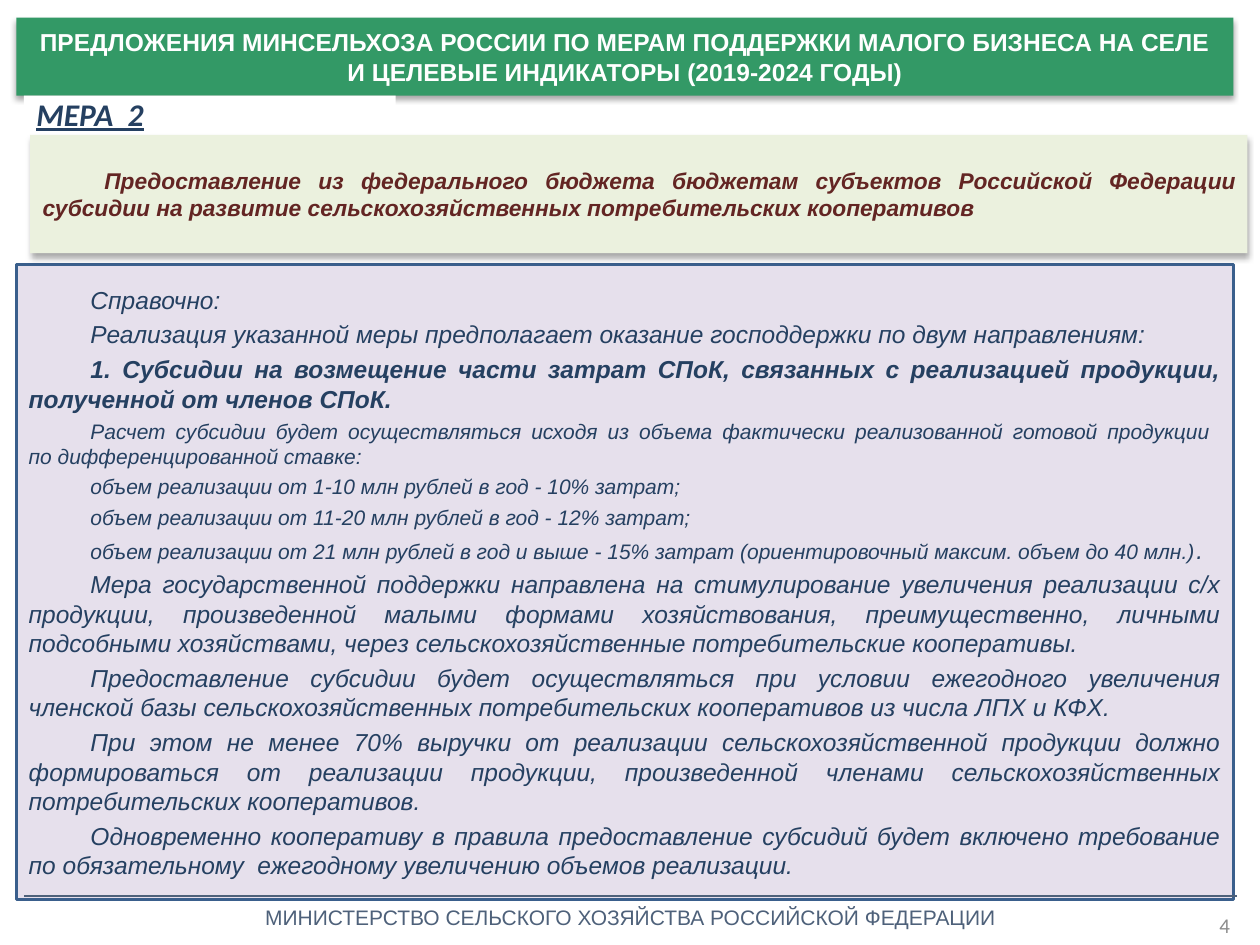
from lxml.etree import SubElement
from pptx import Presentation
from pptx.dml.color import RGBColor
from pptx.enum.shapes import MSO_CONNECTOR as Connector, MSO_SHAPE as Shape
from pptx.enum.text import MSO_ANCHOR as Anchor, PP_ALIGN as Align
from pptx.oxml.ns import qn
from pptx.util import Inches, Pt

NAVY = "254061"
SLATE = "4E617A"
LEFT, WIDTH = 0.13, 9.66
INDENT = 0.49

NOTES = [
    ([("Справочно: ", 14)], False),
    ([("Реализация указанной меры предполагает оказание господдержки по двум направлениям:", 14)], False),
    ([("1. Субсидии на возмещение части затрат СПоК, связанных с реализацией продукции, "
       "полученной от членов СПоК. ", 14)], True),
    ([("Расчет субсидии будет осуществляться исходя из объема фактически реализованной "
       "готовой продукции \nпо дифференцированной ставке:", 12)], False),
    ([("объем реализации от 1-10 млн рублей в год - 10% затрат; ", 12)], False),
    ([("объем реализации от 11-20 млн рублей в год - 12% затрат;", 12)], False),
    ([("объем реализации от 21 млн рублей в год и выше - 15% затрат "
       "(ориентировочный максим. объем до 40 млн.)", 12), (".", 14)], False),
    ([("Мера государственной поддержки направлена на стимулирование увеличения реализации с/х "
       "продукции, произведенной малыми формами хозяйствования, преимущественно, личными "
       "подсобными хозяйствами, через сельскохозяйственные потребительские кооперативы.", 14)], False),
    ([("Предоставление субсидии будет осуществляться при условии ежегодного увеличения членской "
       "базы сельскохозяйственных потребительских кооперативов из числа ЛПХ и КФХ. ", 14)], False),
    ([("При этом не менее 70% выручки от реализации сельскохозяйственной продукции должно "
       "формироваться от реализации продукции, произведенной членами сельскохозяйственных "
       "потребительских кооперативов. ", 14)], False),
    ([("Одновременно кооперативу в правила предоставление субсидий будет включено требование "
       "по обязательному  ежегодному увеличению объемов реализации.", 14)], False),
]


def color(value):
    """Turn a hex string into a colour."""
    return RGBColor.from_string(value)


def add_panel(page, left, top, width, height, fill):
    """Add a plain filled rectangle with vertically centred text."""
    box = page.shapes.add_shape(
        Shape.RECTANGLE, Inches(left), Inches(top), Inches(width), Inches(height))
    box.shadow.inherit = False
    box.fill.solid()
    box.fill.fore_color.rgb = color(fill)
    box.line.fill.background()
    box.text_frame.word_wrap = True
    box.text_frame.vertical_anchor = Anchor.MIDDLE
    return box


def add_label(page, left, top, width, height, anchor=Anchor.TOP):
    """Add a wrapping text box."""
    box = page.shapes.add_textbox(Inches(left), Inches(top), Inches(width), Inches(height))
    box.text_frame.word_wrap = True
    box.text_frame.vertical_anchor = anchor
    return box


def drop_shadow(box, alpha, blur, distance):
    """Cast a soft black shadow straight down."""
    effects = box._element.spPr.find(qn("a:effectLst"))
    shadow = SubElement(effects, qn("a:outerShdw"), blurRad=str(Pt(blur)),
                        dist=str(Pt(distance)), dir="5400000", rotWithShape="0")
    black = SubElement(shadow, qn("a:srgbClr"), val="000000")
    SubElement(black, qn("a:alpha"), val=str(alpha * 1000))


def write(para, text, size, ink, font="Arial", align=Align.LEFT, indent=0,
          bold=False, italic=False, underline=False):
    """Append formatted text to a paragraph, breaking lines at newlines."""
    para.alignment = align
    if indent:
        para._p.get_or_add_pPr().set("indent", str(Inches(indent)))
    for number, line in enumerate(text.split("\n")):
        if number:
            para.add_line_break()
        span = para.add_run()
        span.text = line
        span.font.name = font
        span.font.size = Pt(size)
        span.font.color.rgb = color(ink)
        span.font.bold = bold
        span.font.italic = italic
        span.font.underline = underline


def add_notes(page, left, top, width, height):
    """Place the framed panel that explains the measure."""
    box = add_panel(page, left, top, width, height, "E6E0EC")
    box.line.color.rgb = color("3A5F8C")
    box.line.width = Pt(2)
    frame = box.text_frame
    for number, (parts, bold) in enumerate(NOTES):
        para = frame.add_paragraph() if number else frame.paragraphs[0]
        para.space_before = Pt(3 if number else 0)
        for text, size in parts:
            write(para, text, size, NAVY, align=Align.JUSTIFY, indent=INDENT,
                  bold=bold, italic=True)


def add_measure(page, left, top, width, height):
    """Place the panel that states the measure."""
    box = add_panel(page, left, top, width, height, "EBF1DE")
    drop_shadow(box, 32, 3.5, 2.2)
    write(box.text_frame.paragraphs[0],
          "Предоставление из федерального бюджета бюджетам субъектов Российской Федерации "
          "субсидии на развитие сельскохозяйственных потребительских кооперативов",
          13, "632523", align=Align.JUSTIFY, indent=INDENT, bold=True, italic=True)


def add_footer(page, left, top, width):
    """Place the rule, the ministry name and the page number."""
    name = add_label(page, left + 0.2, top + 0.02, width - 0.4, 0.3)
    write(name.text_frame.paragraphs[0],
          "МИНИСТЕРСТВО СЕЛЬСКОГО ХОЗЯЙСТВА РОССИЙСКОЙ ФЕДЕРАЦИИ",
          12, SLATE, align=Align.CENTER)
    rule = page.shapes.add_connector(
        Connector.STRAIGHT, Inches(left), Inches(top), Inches(left + width), Inches(top))
    rule.line.color.rgb = color(SLATE)
    rule.line.width = Pt(1)
    SubElement(rule._element.spPr, qn("a:effectLst"))
    number = add_label(page, left + width - 0.75, top + 0.03, 0.79, 0.4, Anchor.MIDDLE)
    write(number.text_frame.paragraphs[0], "4", 12, "8C8C8C", font="Calibri", align=Align.RIGHT)


def add_heading(page, left, top, width, height):
    """Place the green title bar and the measure tag under it."""
    bar = add_panel(page, left, top, width, height, "339966")
    drop_shadow(bar, 35, 3.1, 1.8)
    write(bar.text_frame.paragraphs[0],
          "ПРЕДЛОЖЕНИЯ МИНСЕЛЬХОЗА РОССИИ ПО МЕРАМ ПОДДЕРЖКИ МАЛОГО БИЗНЕСА НА СЕЛЕ "
          "И ЦЕЛЕВЫЕ ИНДИКАТОРЫ (2019-2024 ГОДЫ)",
          14, "FFFFFF", align=Align.CENTER, bold=True)
    tag = add_panel(page, left + 0.06, top + height, 2.95, 0.28, "FFFFFF")
    write(tag.text_frame.paragraphs[0], "МЕРА  2", 18, NAVY, font="Calibri",
          bold=True, italic=True, underline=True)


def main():
    """Build the slide and save the deck."""
    deck = Presentation()
    deck.slide_width, deck.slide_height = Inches(10), Inches(7.5)
    page = deck.slides.add_slide(deck.slide_layouts[6])
    add_notes(page, LEFT, 2.1, WIDTH, 5.04)
    add_measure(page, 0.24, 1.07, WIDTH, 0.94)
    add_footer(page, 0.19, 7.11, 9.63)
    add_heading(page, LEFT, 0.14, WIDTH, 0.62)
    deck.save("out.pptx")


if __name__ == "__main__":
    main()
